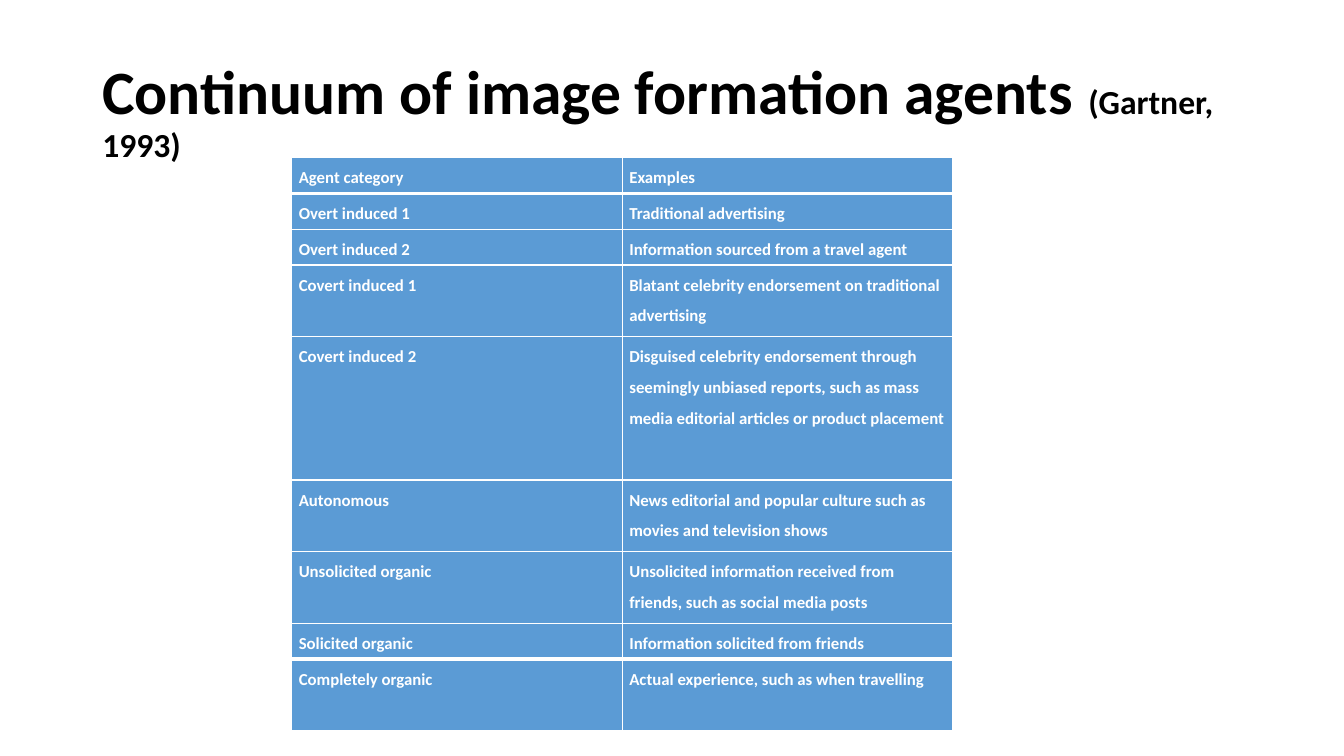
from lxml.etree import SubElement
from pptx import Presentation
from pptx.dml.color import RGBColor
from pptx.enum.text import MSO_ANCHOR as Anchor
from pptx.oxml.ns import qn
from pptx.util import Cm, Pt

BLACK = RGBColor(0x00, 0x00, 0x00)
WHITE = RGBColor(0xFF, 0xFF, 0xFF)
BLUE = RGBColor(0x5B, 0x9B, 0xD5)
FONT = "Calibri"
THIN, THICK = Pt(1), Pt(3)

TITLE_RUNS = [("Continuum of image formation agents ", 44), ("(Gartner, 1993)", 24)]
AGENTS = [
    ("Agent category", "Examples", 1),
    ("Overt induced 1", "Traditional advertising", 1),
    ("Overt induced 2", "Information sourced from a travel agent", 1),
    ("Covert induced 1", "Blatant celebrity endorsement on traditional advertising", 2),
    ("Covert induced 2", "Disguised celebrity endorsement through seemingly unbiased reports, "
     "such as mass media editorial articles or product placement", 4),
    ("Autonomous", "News editorial and popular culture such as movies and television shows", 2),
    ("Unsolicited organic", "Unsolicited information received from friends, "
     "such as social media posts", 2),
    ("Solicited organic", "Information solicited from friends", 1),
    ("Completely organic", "Actual experience, such as when travelling", 2),
]


def format_run(run, size, color):
    """Give a run the bold slide font in a size and colour."""
    run.font.name = FONT
    run.font.size = Pt(size)
    run.font.bold = True
    run.font.color.rgb = color


def add_title(slide, left, top, width, height):
    """Place the title with its smaller citation in the given box."""
    text_frame = slide.shapes.add_textbox(left, top, width, height).text_frame
    text_frame.word_wrap = True
    text_frame.vertical_anchor = Anchor.MIDDLE
    paragraph = text_frame.paragraphs[0]
    paragraph.line_spacing = 0.9
    for text, size in TITLE_RUNS:
        run = paragraph.add_run()
        run.text = text
        format_run(run, size, BLACK)


def add_borders(cell, top, bottom):
    """Draw white cell borders with the given top and bottom widths."""
    properties = cell._tc.get_or_add_tcPr()
    for side, width in (("L", THIN), ("R", THIN), ("T", top), ("B", bottom)):
        line = SubElement(properties, qn(f"a:ln{side}"), w=str(width))
        fill = SubElement(line, qn("a:solidFill"))
        SubElement(fill, qn("a:srgbClr"), val=str(WHITE))


def fill_cell(cell, text, top, bottom):
    """Write and style one table cell."""
    add_borders(cell, top, bottom)
    cell.fill.solid()
    cell.fill.fore_color.rgb = BLUE
    cell.margin_left = cell.margin_right = Cm(0.18)
    cell.margin_top = cell.margin_bottom = 0
    cell.text_frame.text = text
    paragraph = cell.text_frame.paragraphs[0]
    paragraph.line_spacing = 1.5
    format_run(paragraph.runs[0], 12, WHITE)


def add_agent_table(slide, left, top, width, height):
    """Place the agent table, sharing its height by the lines in each row."""
    table = slide.shapes.add_table(len(AGENTS), 2, left, top, width, height).table
    line_height = height / sum(lines for _, _, lines in AGENTS)
    last = len(AGENTS) - 1
    for index, (category, examples, lines) in enumerate(AGENTS):
        table.rows[index].height = int(line_height * lines)
        above = THICK if index in (1, last) else THIN
        below = THICK if index in (0, last - 1) else THIN
        for column, text in enumerate((category, examples)):
            fill_cell(table.cell(index, column), text, above, below)


def main():
    """Build and save the slide."""
    presentation = Presentation()
    presentation.slide_width, presentation.slide_height = Cm(33.87), Cm(19.05)
    slide = presentation.slides.add_slide(presentation.slide_layouts[6])
    add_title(slide, Cm(2.33), Cm(1.01), Cm(29.21), Cm(3.68))
    add_agent_table(slide, Cm(7.35), Cm(3.97), Cm(16.66), Cm(14.45))
    presentation.save("out.pptx")


if __name__ == "__main__":
    main()
